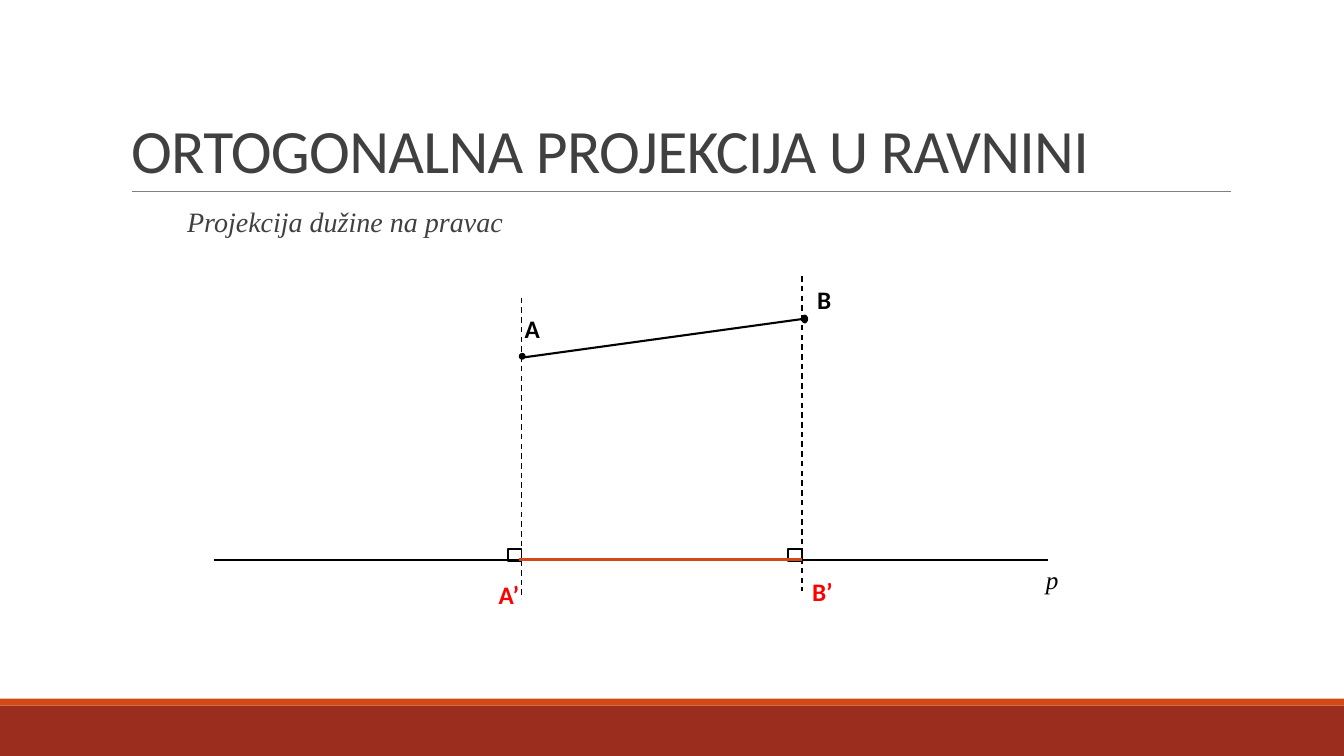
from lxml.etree import SubElement
from pptx import Presentation
from pptx.dml.color import RGBColor
from pptx.enum.dml import MSO_LINE as Dash
from pptx.enum.shapes import MSO_CONNECTOR as Link, MSO_SHAPE as Kind
from pptx.enum.text import MSO_ANCHOR as Anchor, MSO_AUTO_SIZE as Fit, PP_ALIGN as Align
from pptx.oxml.ns import qn
from pptx.util import Pt

WIDE, HIGH = 960, 540
BLACK, GREY, RED, RUST, BRICK = "000000", "404040", "FF0000", "D34817", "9B2D1F"
SANS, SERIF = "Calibri", "Times New Roman"


def paint(target, color):
    """Give a fill, or a font's fill, one solid colour."""
    target.solid()
    target.fore_color.rgb = RGBColor.from_string(color)


def style(para, size, face, color, bold=False, italic=False):
    font = para.font
    font.size, font.name = Pt(size), face
    font.bold, font.italic = bold, italic
    paint(font.fill, color)
    para.alignment = Align.LEFT


def place(shape, left, top, width, height):
    shape.left, shape.top = Pt(left), Pt(top)
    shape.width, shape.height = Pt(width), Pt(height)


def add_line(slide, start, end, width=1, color=BLACK, dash=None):
    line = slide.shapes.add_connector(Link.STRAIGHT, *map(Pt, start + end))
    SubElement(line.element.spPr, qn("a:effectLst"))
    line.line.width = Pt(width)
    paint(line.line.fill, color)
    if dash:
        line.line.dash_style = dash


def add_block(slide, kind, box, fill=None, edge=None):
    block = slide.shapes.add_shape(kind, *map(Pt, box))
    block.shadow.inherit = False
    if fill:
        paint(block.fill, fill)
    else:
        block.fill.background()
    if edge:
        block.line.width = Pt(1.25)
        paint(block.line.fill, edge)
    else:
        block.line.fill.background()


def add_label(slide, text, left, top, color=BLACK, face=SANS, bold=True, width=33):
    frame = slide.shapes.add_textbox(*map(Pt, (left, top, width, 29))).text_frame
    frame.word_wrap = True
    para = frame.paragraphs[0]
    para.text = text
    style(para, 18, face, color, bold, not bold)


def add_footer(slide, left, top, width, height):
    strip = 5
    add_block(slide, Kind.RECTANGLE, (left, top + strip, width, height - strip), BRICK)
    add_block(slide, Kind.RECTANGLE, (left, top, width, strip), RUST)


def add_title(slide, left, top, width, height):
    title = slide.shapes.title
    place(title, left, top, width, height)
    frame = title.text_frame
    frame.text = "ORTOGONALNA PROJEKCIJA U RAVNINI"
    frame.auto_size, frame.vertical_anchor = Fit.NONE, Anchor.BOTTOM
    para = frame.paragraphs[0]
    para.line_spacing = 0.85
    style(para, 44, SANS, GREY)
    para.runs[0].font._element.set("spc", "-50")
    rule = top + height
    add_line(slide, (left + 8, rule), (left + width + 0.7, rule), 0.5, "808080")


def add_body(slide, left, top, width, height):
    body = slide.placeholders[1]
    place(body, left, top, width, height)
    frame = body.text_frame
    frame.text = "Projekcija dužine na pravac"
    frame.auto_size, frame.vertical_anchor = Fit.NONE, Anchor.TOP
    frame.margin_left = frame.margin_right = 0
    para = frame.paragraphs[0]
    para.line_spacing = 0.9
    para.space_before, para.space_after = Pt(12), Pt(2)
    style(para, 20, SERIF, GREY, italic=True)
    props = para._p.get_or_add_pPr()
    props.set("marL", str(Pt(47.2)))
    props.set("indent", "0")
    SubElement(props, qn("a:buNone"))


def add_figure(slide, left, top, width):
    """Draw segment AB and its projection A'B' on the line p."""
    base = top + 202.6
    add_line(slide, (left, base), (left + width, base))
    add_label(slide, "p", left + 587.4, top + 202, face=SERIF, bold=False, width=25)

    ax, ay = left + 220, top + 58.2
    bx, by = left + 420.4, top + 30.6
    add_line(slide, (ax, ay), (bx, by), 1.5)

    # foot x, dashed line top and bottom, dot centre and height
    for foot, high, low, x, y, tall in (
        (ax, top + 15.4, top + 230.7, ax + 0.4, ay - 2 + 1, 3.6),
        (bx, top, top + 225, bx + 1.8, by, 5),
    ):
        add_line(slide, (foot, high), (foot, low), dash=Dash.DASH)
        add_block(slide, Kind.OVAL, (x - 1.8, y - tall / 2, 3.6, tall), BLACK, BLACK)
        add_block(slide, Kind.RECTANGLE, (foot - 10, base - 8, 10, 8.6), edge=BLACK)

    for text, x, y, color in (
        ("A", 215, 22.6, BLACK),
        ("B", 424, 2.4, BLACK),
        ("A’", 196.5, 212.7, RED),
        ("B’", 420.4, 210.5, RED),
    ):
        add_label(slide, text, left + x, top + y, color)
    add_line(slide, (ax - 2, base), (bx, base), 2.25, RUST)


def main():
    deck = Presentation()
    deck.slide_width, deck.slide_height = Pt(WIDE), Pt(HIGH)
    slide = deck.slides.add_slide(deck.slide_layouts[1])
    add_footer(slide, 0, HIGH - 41, WIDE, 41)
    add_title(slide, 86.4, 22.3, 792, 114.5)
    add_body(slide, 86.4, 145.4, 792, 316.8)
    add_figure(slide, 152.6, 197.3, 596)
    deck.save("out.pptx")


if __name__ == "__main__":
    main()
